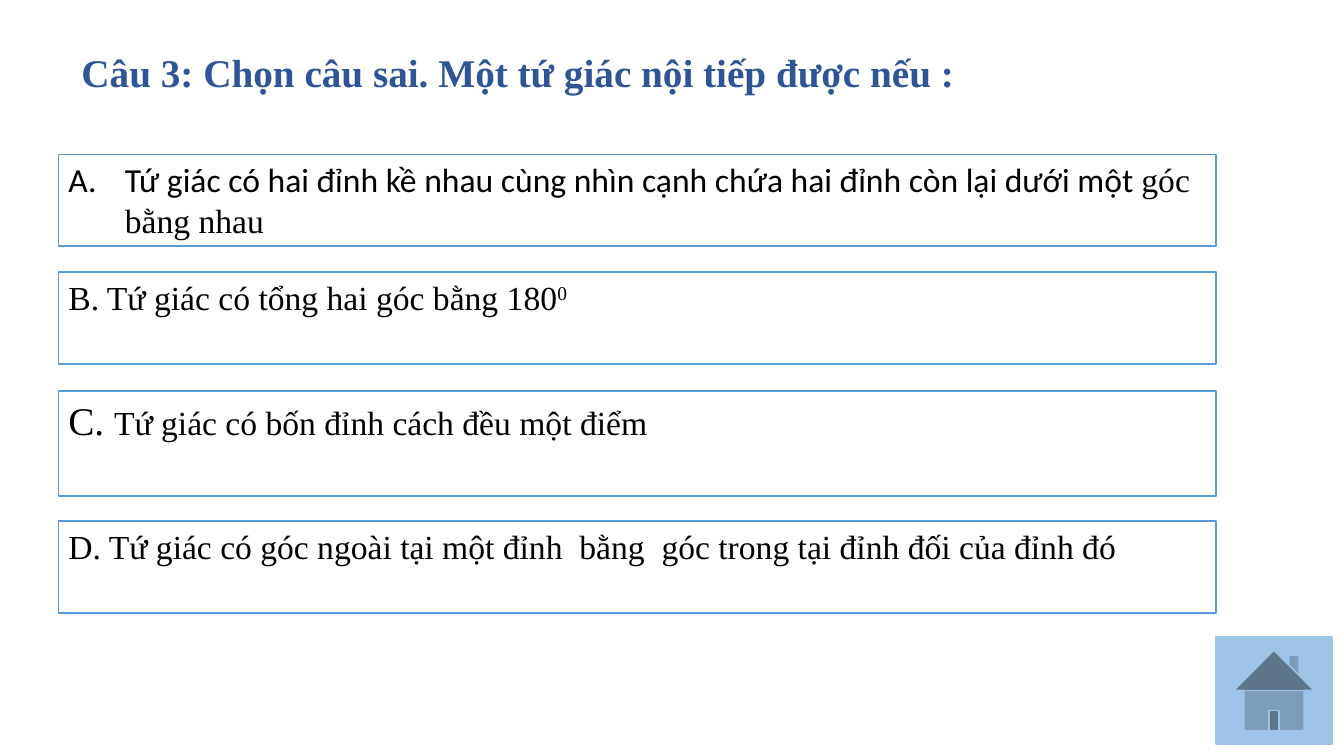
"""Build a quiz slide with one question, four answer boxes and a home button."""
from dataclasses import dataclass

from lxml.etree import SubElement
from pptx import Presentation
from pptx.dml.color import RGBColor
from pptx.enum.shapes import MSO_SHAPE
from pptx.enum.text import MSO_ANCHOR, PP_ALIGN
from pptx.oxml.ns import qn
from pptx.util import Inches, Pt


@dataclass(frozen=True)
class Theme:
    """Colours, fonts and type sizes of the slide."""
    title: RGBColor = RGBColor(0x2F, 0x55, 0x97)
    text: RGBColor = RGBColor(0x00, 0x00, 0x00)
    box: RGBColor = RGBColor(0xFF, 0xFF, 0xFF)
    border: RGBColor = RGBColor(0x5B, 0x9B, 0xD5)
    button: RGBColor = RGBColor(0x9D, 0xC3, 0xE6)
    serif: str = "Times New Roman"
    sans: str = "Calibri"
    large: int = 28
    body: int = 24


THEME = Theme()
ANSWER_LEFT, ANSWER_WIDTH = 0.58, 11.48


def add_run(paragraph, text, *, font=THEME.serif, size=THEME.body,
            color=THEME.text, bold=False, baseline=None):
    """Append formatted text to a paragraph."""
    run = paragraph.add_run()
    run.text = text
    run.font.name = font
    run.font.size = Pt(size)
    run.font.color.rgb = color
    run.font.bold = bold
    if baseline is not None:
        run.font._element.set("baseline", str(baseline))


def number_with_letter(paragraph, indent):
    """Give a paragraph a hanging capital-letter number."""
    properties = paragraph._p.get_or_add_pPr()
    properties.set("marL", str(Inches(indent)))
    properties.set("indent", str(-Inches(indent)))
    SubElement(properties, qn("a:buFont"), typeface="+mj-lt")
    SubElement(properties, qn("a:buAutoNum"), type="alphaUcPeriod")


def add_filled_shape(slide, kind, position, fill, line):
    """Add a flat preset shape with a one-point outline."""
    shape = slide.shapes.add_shape(kind, *map(Inches, position))
    shape.shadow.inherit = False
    shape.fill.solid()
    shape.fill.fore_color.rgb = fill
    shape.line.color.rgb = line
    shape.line.width = Pt(1)
    return shape


def add_title(slide, text):
    """Add the question line."""
    box = slide.shapes.add_textbox(*map(Inches, (0.71, 0.43, 8.96, 0.57)))
    box.text_frame.word_wrap = False
    paragraph = box.text_frame.paragraphs[0]
    paragraph.alignment = PP_ALIGN.JUSTIFY
    add_run(paragraph, text, size=THEME.large, color=THEME.title, bold=True)


def add_answer(slide, top, height, runs, indent=None):
    """Add an outlined answer box holding (text, format) runs."""
    position = (ANSWER_LEFT, top, ANSWER_WIDTH, height)
    shape = add_filled_shape(slide, MSO_SHAPE.RECTANGLE, position,
                             THEME.box, THEME.border)
    frame = shape.text_frame
    frame.word_wrap = True
    frame.vertical_anchor = MSO_ANCHOR.TOP
    paragraph = frame.paragraphs[0]
    paragraph.alignment = PP_ALIGN.LEFT
    if indent:
        number_with_letter(paragraph, indent)
    for text, style in runs:
        add_run(paragraph, text, **style)


def main():
    """Build and save the slide."""
    presentation = Presentation()
    presentation.slide_width = Inches(13.33)
    presentation.slide_height = Inches(7.5)
    slide = presentation.slides.add_slide(presentation.slide_layouts[6])

    add_title(slide, "Câu 3: Chọn câu sai. Một tứ giác nội tiếp được nếu :")
    add_answer(slide, 1.53, 0.91, [
        ("Tứ giác có hai đỉnh kề nhau cùng nhìn cạnh chứa hai đỉnh còn lại dưới một ",
         {"font": THEME.sans}),
        ("góc bằng nhau", {}),
    ], indent=0.56)
    add_answer(slide, 2.7, 0.91, [
        ("B. Tứ giác có tổng hai góc bằng 180", {}),
        ("0", {"baseline": 30000}),
    ])
    add_answer(slide, 3.88, 1.04, [
        ("C. ", {"size": THEME.large}),
        ("Tứ giác có bốn đỉnh cách đều một điểm", {}),
    ])
    add_answer(slide, 5.17, 0.91, [
        ("D. Tứ giác có góc ngoài tại một đỉnh  bằng  góc trong tại đỉnh đối của đỉnh đó", {}),
    ])
    add_filled_shape(slide, MSO_SHAPE.ACTION_BUTTON_HOME,
                     (12.06, 6.32, 1.15, 1.06), THEME.button, THEME.button)

    presentation.save("out.pptx")


if __name__ == "__main__":
    main()
